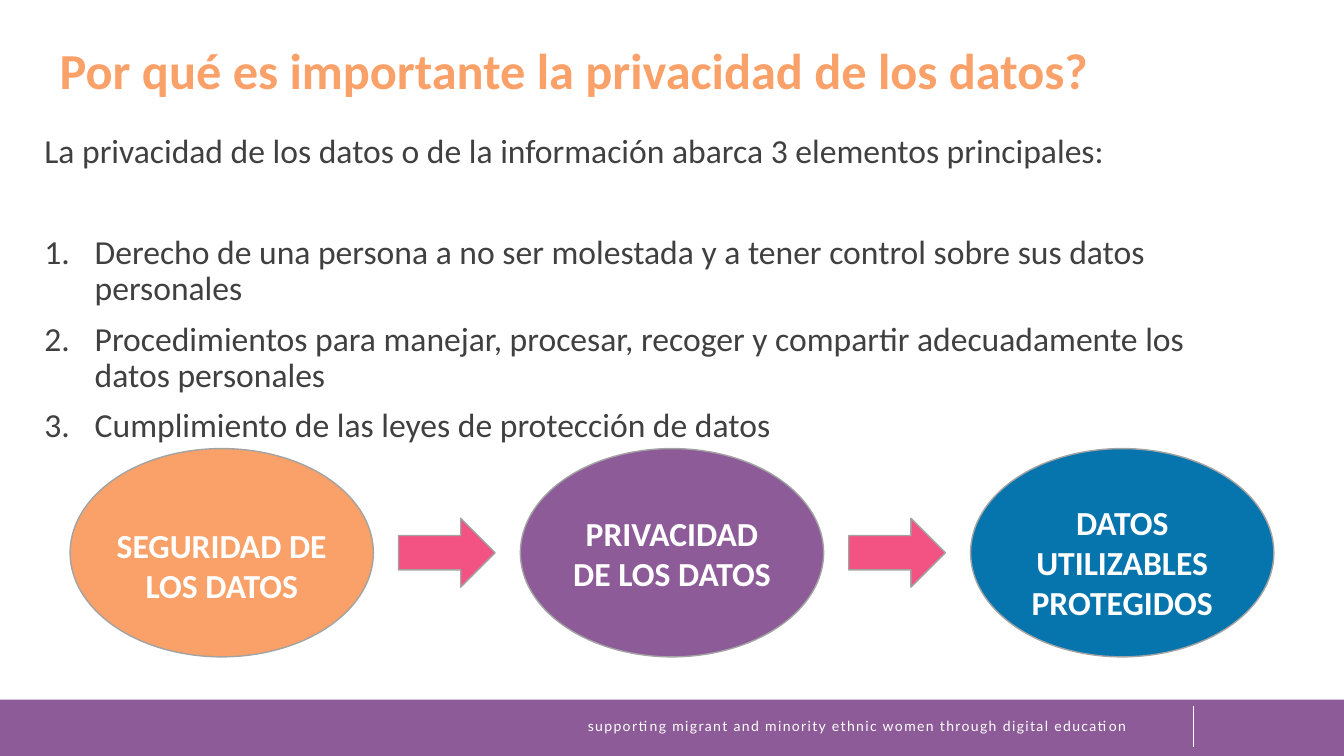
import dataclasses

import lxml.etree
import pptx
import pptx.dml.color
import pptx.enum.shapes
import pptx.enum.text
import pptx.oxml.ns
import pptx.util

SHAPE = pptx.enum.shapes.MSO_SHAPE
ALIGN = pptx.enum.text.PP_ALIGN
ANCHOR = pptx.enum.text.MSO_ANCHOR

# The slide is a grid of square cells
COLUMNS, ROWS = 160, 90
CELL = pptx.util.Inches(1) / 12


@dataclasses.dataclass(frozen=True)
class Theme:
    orange: str = "F9A169"
    purple: str = "8D5B98"
    blue: str = "0675AD"
    pink: str = "F35383"
    outline: str = "A3A3A3"
    ink: str = "404040"
    white: str = "FFFFFF"
    font: str = "Calibri"
    footer_font: str = "Lato"
    title_size: int = 36
    text_size: int = 24
    footer_size: int = 10
    line_spacing: float = 0.9
    space_before: int = 10


THEME = Theme()

TITLE = "Por qué es importante la privacidad de los datos?"
INTRO = "La privacidad de los datos o de la información abarca 3 elementos principales:"
ELEMENTS = [
    "Derecho de una persona a no ser molestada y a tener control sobre sus datos personales",
    "Procedimientos para manejar, procesar, recoger y compartir adecuadamente los datos personales",
    "Cumplimiento de las leyes de protección de datos",
]
TAGLINE = "supporting migrant and minority ethnic women through digital education"
# Label, oval colour, label width, label shift below the oval's centre
STAGES = [
    ("SEGURIDAD DE LOS DATOS", THEME.orange, 30.2, 1.5),
    ("PRIVACIDAD DE LOS DATOS", THEME.purple, 26.4, 0),
    ("DATOS UTILIZABLES PROTEGIDOS", THEME.blue, 27.6, 1.1),
]


def cells(*counts):
    return [pptx.util.Emu(round(count * CELL)) for count in counts]


def rgb(value):
    return pptx.dml.color.RGBColor.from_string(value)


def add_span(para, text, size, color, font=THEME.font, bold=False):
    span = para.add_run()
    span.text = text
    span.font.name = font
    span.font.size = pptx.util.Pt(size)
    span.font.bold = bold
    span.font.color.rgb = rgb(color)
    return span


def add_box(page, left, top, width, height, anchor=ANCHOR.TOP):
    box = page.shapes.add_textbox(*cells(left, top, width, height))
    box.text_frame.word_wrap = True
    box.text_frame.vertical_anchor = anchor
    return box


def add_figure(page, kind, left, top, width, height, fill, outlined=True):
    figure = page.shapes.add_shape(kind, *cells(left, top, width, height))
    figure.shadow.inherit = False
    figure.fill.solid()
    figure.fill.fore_color.rgb = rgb(fill)
    if outlined:
        figure.line.color.rgb = rgb(THEME.outline)
        figure.line.width = pptx.util.Pt(1)
    else:
        figure.line.fill.background()
    return figure


def number_paragraph(para):
    properties = para._p.get_or_add_pPr()
    indent = pptx.util.Inches(0.5)
    properties.set("marL", str(indent))
    properties.set("indent", str(-indent))
    bullet = lxml.etree.SubElement(properties, pptx.oxml.ns.qn("a:buAutoNum"))
    bullet.set("type", "arabicPeriod")


def add_footer(page):
    top = 83.3
    add_figure(page, SHAPE.RECTANGLE, 0, top, COLUMNS, ROWS - top, THEME.purple, outlined=False)

    # Divider
    divider = page.shapes.add_connector(
        pptx.enum.shapes.MSO_CONNECTOR.STRAIGHT, *cells(142.1, 88.9, 142.1, 84.1))
    divider.line.color.rgb = rgb(THEME.white)
    divider.line.width = pptx.util.Pt(1)
    lxml.etree.SubElement(divider._element.spPr, pptx.oxml.ns.qn("a:effectLst"))

    # Letter-spaced tagline
    para = add_box(page, 67.2, 84.8, 69.7, 3.2).text_frame.paragraphs[0]
    para.alignment = ALIGN.CENTER
    span = add_span(para, TAGLINE, THEME.footer_size, THEME.white, THEME.footer_font)
    span.font._element.set("spc", "100")


def add_title(page):
    title = page.shapes.title
    title.left, title.top, title.width, title.height = cells(5.9, 4.9, 145.7, 8)
    frame = title.text_frame
    frame.auto_size = pptx.enum.text.MSO_AUTO_SIZE.NONE
    frame.vertical_anchor = ANCHOR.TOP
    para = frame.paragraphs[0]
    para.alignment = ALIGN.LEFT
    para.line_spacing = THEME.line_spacing
    add_span(para, TITLE, THEME.title_size, THEME.orange, bold=True)


def add_elements(page):
    frame = add_box(page, 4.1, 15.4, 145.7, 36.8).text_frame
    para = frame.paragraphs[0]
    para.line_spacing = THEME.line_spacing
    add_span(para, INTRO, THEME.text_size, THEME.ink)
    for index, element in enumerate(ELEMENTS):
        para = frame.add_paragraph()
        number_paragraph(para)
        para.line_spacing = THEME.line_spacing
        # The list starts one line lower than its normal gap
        para.space_before = pptx.util.Pt(THEME.space_before if index else 46.4)
        add_span(para, element, THEME.text_size, THEME.ink)


def add_flow(page):
    oval_width, oval_height, pitch, middle = 36.1, 24.8, 53.6, 65.8
    arrow_width, arrow_height, label_height = 11.5, 8.2, 15.7
    first_center = COLUMNS / 2 - pitch
    for index, (label, color, label_width, shift) in enumerate(STAGES):
        center = first_center + index * pitch
        add_figure(page, SHAPE.OVAL, center - oval_width / 2, middle - oval_height / 2,
                   oval_width, oval_height, color)
        # Arrow halfway to the next oval
        if index < len(STAGES) - 1:
            add_figure(page, SHAPE.RIGHT_ARROW, center + (pitch - arrow_width) / 2,
                       middle - arrow_height / 2, arrow_width, arrow_height, THEME.pink)
        box = add_box(page, center - label_width / 2, middle + shift - label_height / 2,
                      label_width, label_height, ANCHOR.MIDDLE)
        para = box.text_frame.paragraphs[0]
        para.alignment = ALIGN.CENTER
        add_span(para, label, THEME.text_size, THEME.white, bold=True)


def main():
    deck = pptx.Presentation()
    deck.slide_width, deck.slide_height = cells(COLUMNS, ROWS)
    page = deck.slides.add_slide(deck.slide_layouts.get_by_name("Title Only"))
    add_footer(page)
    add_title(page)
    add_elements(page)
    add_flow(page)
    deck.save("out.pptx")


if __name__ == "__main__":
    main()
